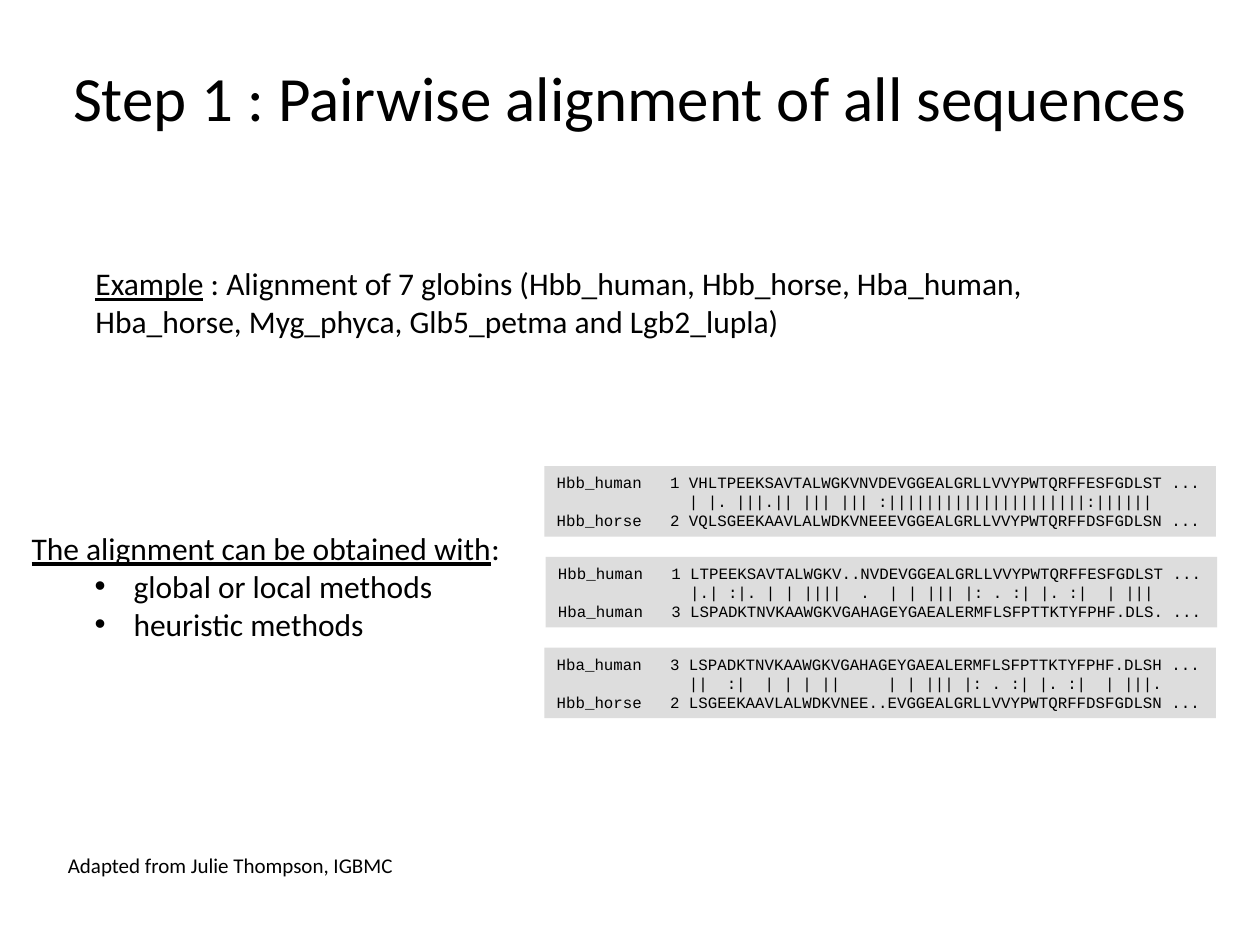
from lxml.etree import SubElement
from pptx import Presentation
from pptx.dml.color import RGBColor
from pptx.enum.shapes import MSO_SHAPE as Preset
from pptx.enum.text import MSO_ANCHOR as Anchor, MSO_AUTO_SIZE as AutoSize, PP_ALIGN as Align
from pptx.oxml.ns import qn
from pptx.util import Inches, Pt

COLORS = {"text": "000000", "panel": "DDDDDD", "page": "FFFFFF"}
SANS, MONO = "Calibri", "Courier New"

# Courier characters are 0.6 em wide: 0.075 inch at 9 pt
CHAR_WIDTH = 0.075
NUMBER_COLUMN, SEQUENCE_COLUMN = 12, 14

# Left, top, first sequence, matches, second sequence
ALIGNMENTS = [
    (4.32, 3.70,
     ("Hbb_human", 1, "VHLTPEEKSAVTALWGKVNVDEVGGEALGRLLVVYPWTQRFFESFGDLST ..."),
     "| |. |||.|| ||| ||| :|||||||||||||||||||||:||||||",
     ("Hbb_horse", 2, "VQLSGEEKAAVLALWDKVNEEEVGGEALGRLLVVYPWTQRFFDSFGDLSN ...")),
    (4.33, 4.42,
     ("Hbb_human", 1, "LTPEEKSAVTALWGKV..NVDEVGGEALGRLLVVYPWTQRFFESFGDLST ..."),
     "|.| :|. | | ||||  .  | | ||| |: . :| |. :|  | |||",
     ("Hba_human", 3, "LSPADKTNVKAAWGKVGAHAGEYGAEALERMFLSFPTTKTYFPHF.DLS. ...")),
    (4.32, 5.14,
     ("Hba_human", 3, "LSPADKTNVKAAWGKVGAHAGEYGAEALERMFLSFPTTKTYFPHF.DLSH ..."),
     "||  :|  | | | ||     | | ||| |: . :| |. :|  | |||.",
     ("Hbb_horse", 2, "LSGEEKAAVLALWDKVNEE..EVGGEALGRLLVVYPWTQRFFDSFGDLSN ...")),
]


def set_values(target, values):
    for name, value in values.items():
        setattr(target, name, value)


def place(shape, left, top, width, height):
    set_values(shape, {"left": Inches(left), "top": Inches(top),
                       "width": Inches(width), "height": Inches(height)})


def format_frame(frame, anchor, wrap=True):
    set_values(frame, {"word_wrap": wrap, "auto_size": AutoSize.NONE,
                       "vertical_anchor": anchor})


def paint(shape, color):
    shape.fill.solid()
    shape.fill.fore_color.rgb = RGBColor.from_string(COLORS[color])


def add_run(paragraph, text, size, font=SANS, underline=False):
    run = paragraph.add_run()
    run.text = text
    set_values(run.font, {"name": font, "size": Pt(size), "underline": underline})
    run.font.color.rgb = RGBColor.from_string(COLORS["text"])


def set_bullet(paragraph, char=None, margin=0, indent=0):
    properties = paragraph._p.get_or_add_pPr()
    properties.set("marL", str(Inches(margin)))
    properties.set("indent", str(Inches(indent)))
    if char:
        SubElement(properties, qn("a:buFont"), typeface="Arial")
        SubElement(properties, qn("a:buChar"), char=char)
    else:
        SubElement(properties, qn("a:buNone"))


def set_tabs(paragraph, columns):
    tabs = SubElement(paragraph._p.get_or_add_pPr(), qn("a:tabLst"))
    for column in columns:
        position = str(Inches(column * CHAR_WIDTH))
        SubElement(tabs, qn("a:tab"), pos=position, algn="l")


def add_title(slide, text):
    title = slide.shapes.title
    place(title, 0, 0.14, 10, 1.25)
    format_frame(title.text_frame, Anchor.MIDDLE)
    heading = title.text_frame.paragraphs[0]
    heading.alignment = Align.CENTER
    add_run(heading, text, 36)


def add_methods(slide, lead, methods):
    body = slide.placeholders[1]
    place(body, 0.15, 4.15, 4, 1.31)
    paint(body, "page")
    frame = body.text_frame
    format_frame(frame, Anchor.TOP)
    intro = frame.paragraphs[0]
    intro.space_before = Pt(0)
    set_bullet(intro)
    add_run(intro, lead, 18, underline=True)
    add_run(intro, ":", 18)
    for method in methods:
        item = frame.add_paragraph()
        set_values(item, {"level": 1, "space_before": Pt(0)})
        set_bullet(item, "•", 0.81, -0.31)
        add_run(item, method, 18)


def add_text(slide, box, runs, size, anchor=Anchor.TOP):
    label = slide.shapes.add_textbox(0, 0, 0, 0)
    place(label, *box)
    format_frame(label.text_frame, anchor)
    for text, underline in runs:
        add_run(label.text_frame.paragraphs[0], text, size, underline=underline)


def add_alignment(slide, left, top, first, matches, second):
    panel = slide.shapes.add_shape(Preset.RECTANGLE, 0, 0, 0, 0)
    place(panel, left, top, 5.33, 0.56)
    paint(panel, "panel")
    panel.line.fill.background()
    panel.shadow.inherit = False
    frame = panel.text_frame
    format_frame(frame, Anchor.MIDDLE, wrap=False)
    rows = ["{}\t{} {}".format(*first), f"\t\t{matches}", "{}\t{} {}".format(*second)]
    for index, row in enumerate(rows):
        line = frame.add_paragraph() if index else frame.paragraphs[0]
        line.alignment = Align.LEFT
        set_tabs(line, (NUMBER_COLUMN, SEQUENCE_COLUMN))
        add_run(line, row, 9, MONO)


def main():
    deck = Presentation()
    set_values(deck, {"slide_width": Inches(10), "slide_height": Inches(7.5)})
    slide = deck.slides.add_slide(deck.slide_layouts[1])

    # Heading and example
    add_title(slide, "Step 1 : Pairwise alignment of all sequences")
    add_text(slide, (0.66, 2.05, 8.57, 0.7), [
        ("Example", True),
        (" : Alignment of 7 globins (Hbb_human, Hbb_horse, Hba_human, "
         "Hba_horse, Myg_phyca, Glb5_petma and Lgb2_lupla)", False)], 18)

    # Methods beside the pairwise alignments
    add_methods(slide, "The alignment can be obtained with",
                ["global or local methods", "heuristic methods"])
    for alignment in ALIGNMENTS:
        add_alignment(slide, *alignment)

    # Credit
    add_text(slide, (0.44, 6.67, 2.81, 0.4),
             [("Adapted from Julie Thompson, IGBMC", False)], 12, Anchor.MIDDLE)
    deck.save("out.pptx")


if __name__ == "__main__":
    main()
